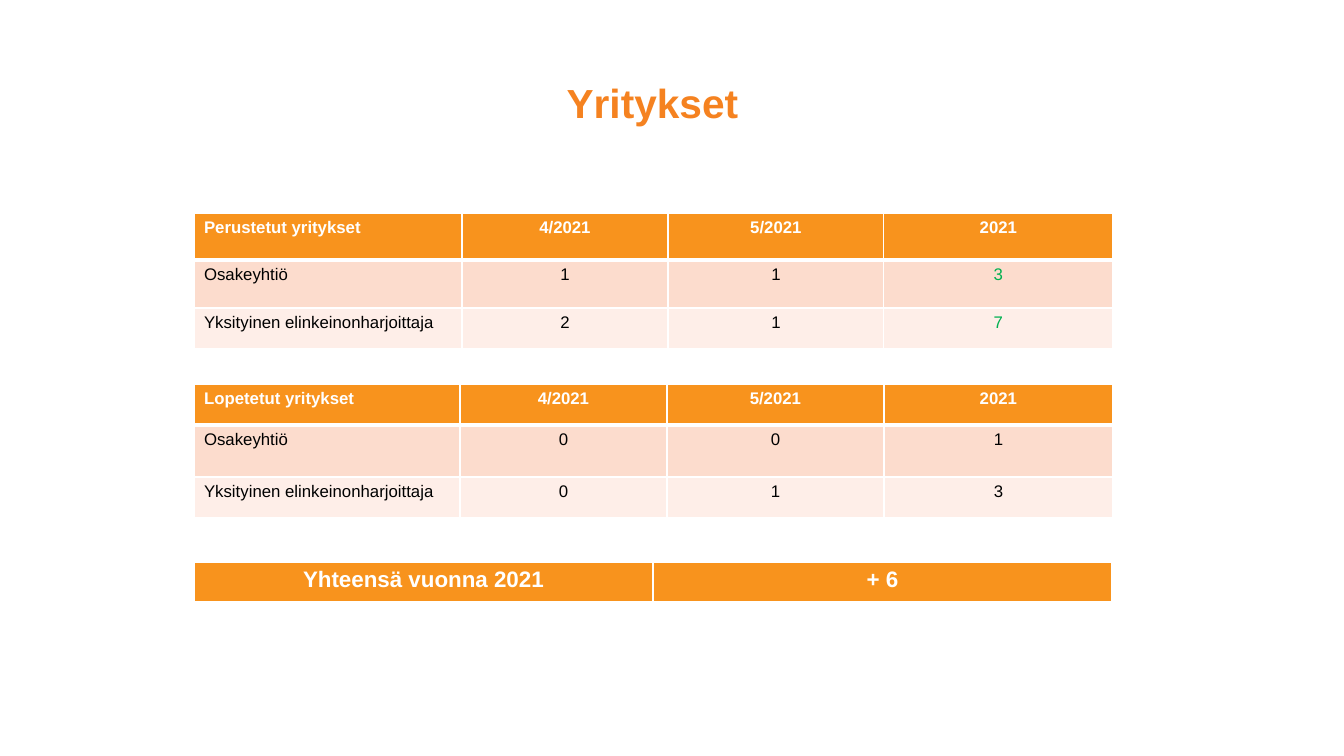
from lxml import etree
from pptx import Presentation
from pptx import util as u
from pptx.dml.color import RGBColor
from pptx.enum import text
from pptx.oxml.ns import qn

PX = u.Inches(1) / 100.8

TITLE_ORANGE = RGBColor(0xF5, 0x82, 0x20)
HEADER_ORANGE = RGBColor(0xF8, 0x93, 0x1D)
PEACH = RGBColor(0xFC, 0xDC, 0xCD)
PALE_PEACH = RGBColor(0xFE, 0xEE, 0xE8)
WHITE = RGBColor(0xFF, 0xFF, 0xFF)
BLACK = RGBColor(0x00, 0x00, 0x00)
GREEN = RGBColor(0x00, 0xB0, 0x50)

ROW_FILLS = (HEADER_ORANGE, PEACH, PALE_PEACH)
TABLE_LEFT = 194
LEFT, CENTER = text.PP_ALIGN.LEFT, text.PP_ALIGN.CENTER


def px(length):
    return u.Emu(round(length * PX))


def write(frame, words, size, color, bold, align):
    paragraph = frame.paragraphs[0]
    paragraph.alignment = align
    run = paragraph.add_run()
    run.text = words
    run.font.color.rgb = color
    font_format = {"name": "Arial", "size": u.Pt(size), "bold": bold}
    for attribute, value in font_format.items():
        setattr(run.font, attribute, value)
    return paragraph


def add_title(slide, words):
    title = slide.shapes.add_textbox(px(73), px(64), px(1159), px(82))
    frame = title.text_frame
    frame.word_wrap = True
    frame.vertical_anchor = text.MSO_ANCHOR.MIDDLE
    write(frame, words, 29, TITLE_ORANGE, True, CENTER).line_spacing = 0.9


def set_borders(cell, top, bottom):
    properties = cell._tc.get_or_add_tcPr()
    for side, width in {"L": 1, "R": 1, "T": top, "B": bottom}.items():
        line = etree.SubElement(properties, qn(f"a:ln{side}"), w=str(u.Pt(width)))
        fill = etree.SubElement(line, qn("a:solidFill"))
        etree.SubElement(fill, qn("a:srgbClr"), val=str(WHITE))


def add_table(slide, top, widths, heights, rows, size=12,
              first_align=LEFT, total_color=BLACK):
    frame = slide.shapes.add_table(len(rows), len(widths), px(TABLE_LEFT), px(top),
                                   px(sum(widths)), px(sum(heights)))
    table = frame.table
    for column, width in zip(table.columns, widths):
        column.width = px(width)
    for row, height in zip(table.rows, heights):
        row.height = px(height)

    for r, values in enumerate(rows):
        header = r == 0
        for c, words in enumerate(values):
            cell = table.cell(r, c)
            # A thick line parts the header from the body
            set_borders(cell, 3 if r == 1 else 1, 3 if header else 1)
            cell.fill.solid()
            cell.fill.fore_color.rgb = ROW_FILLS[r]
            last = c == len(values) - 1
            color = WHITE if header else total_color if last else BLACK
            write(cell.text_frame, words, size, color, header,
                  first_align if c == 0 else CENTER)


def main():
    deck = Presentation()
    deck.slide_width, deck.slide_height = px(1344), px(756)
    slide = deck.slides.add_slide(deck.slide_layouts[6])
    add_title(slide, "Yritykset")

    periods = ("4/2021", "5/2021", "2021")

    # Closed companies
    add_table(slide, 384, (266, 207, 217, 229), (41, 52, 41), (
        ("Lopetetut yritykset", *periods),
        ("Osakeyhtiö", "0", "0", "1"),
        ("Yksityinen elinkeinonharjoittaja", "0", "1", "3"),
    ))

    # Founded companies
    add_table(slide, 213, (268, 206, 216, 229), (47, 48, 41), (
        ("Perustetut yritykset", *periods),
        ("Osakeyhtiö", "1", "1", "3"),
        ("Yksityinen elinkeinonharjoittaja", "2", "1", "7"),
    ), total_color=GREEN)

    # Net change over the year
    add_table(slide, 562, (459, 459), (41,),
              (("Yhteensä vuonna 2021", "+ 6"),), size=16, first_align=CENTER)

    deck.save("out.pptx")


if __name__ == "__main__":
    main()
